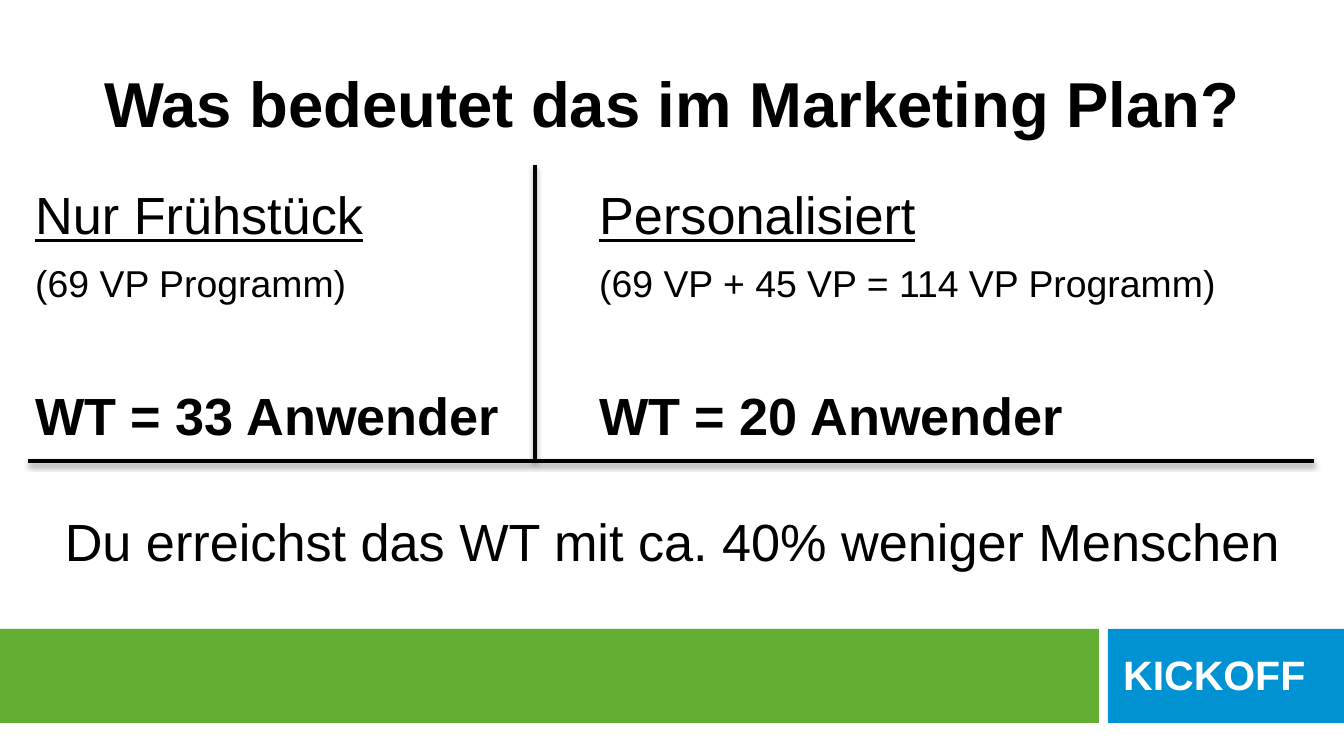
import pptx
import pptx.util
import pptx.dml.color
import pptx.enum.shapes
import pptx.enum.text
import pptx.oxml

SCALE = 914400 / 134.4  # EMU in one px
FONT = "Arial"
BLACK, WHITE, GREEN, BLUE = "000000", "FFFFFF", "63AF34", "0092D2"
LEFT = pptx.enum.text.PP_ALIGN.LEFT
MID = pptx.enum.text.PP_ALIGN.CENTER

SHADOW = (
    '<a:effectLst xmlns:a="http://schemas.openxmlformats.org/drawingml/2006/main">'
    '<a:outerShdw blurRad="39370" dist="20320" dir="5400000" rotWithShape="0">'
    '<a:srgbClr val="000000"><a:alpha val="38000"/></a:srgbClr>'
    '</a:outerShdw></a:effectLst>'
)


def px(*nums):
    return [pptx.util.Emu(round(n * SCALE)) for n in nums]


def color(code):
    return pptx.dml.color.RGBColor.from_string(code)


def bar(slide, x, y, w, h, fill):
    kind = pptx.enum.shapes.MSO_SHAPE.RECTANGLE
    shape = slide.shapes.add_shape(kind, *px(x, y, w, h))
    shape.shadow.inherit = False
    shape.fill.solid()
    shape.fill.fore_color.rgb = color(fill)
    shape.line.fill.background()


def box(slide, x, y, w, h):
    frame = slide.shapes.add_textbox(*px(x, y, w, h)).text_frame
    frame.word_wrap = True
    return frame


def style(para, text, size, bold=False, under=False, ink=BLACK, align=LEFT):
    para.text = text
    para.alignment = align
    font = para.font
    font.name, font.size = FONT, pptx.util.Pt(size)
    font.bold, font.underline = bold, under
    font.color.rgb = color(ink)


def column(slide, x, w, head, note, goal):
    frame = box(slide, x, 176, w, 460)
    style(frame.paragraphs[0], head, 28, under=True)
    for text, size, bold, gap in ((note, 20, False, 8), (goal, 28, True, 42)):
        para = frame.add_paragraph()
        style(para, text, size, bold)
        para.space_before = pptx.util.Pt(gap)


def rule(slide, x1, y1, x2, y2):
    kind = pptx.enum.shapes.MSO_CONNECTOR.STRAIGHT
    line = slide.shapes.add_connector(kind, *px(x1, y1, x2, y2))
    line.line.color.rgb = color(BLACK)
    line.line.width = pptx.util.Pt(2)
    line._element.spPr.append(pptx.oxml.parse_xml(SHADOW))


def main():
    deck = pptx.Presentation()
    deck.slide_width, deck.slide_height = px(1344, 756)
    slide = deck.slides.add_slide(deck.slide_layouts[6])

    # Footer band
    bar(slide, 0, 629, 1099, 94, GREEN)
    bar(slide, 1108, 629, 236, 94, BLUE)
    label = box(slide, 1110, 652, 234, 54).paragraphs[0]
    style(label, "KICKOFF", 22, bold=True, ink=WHITE)
    label.line_spacing = 0.8

    # Title
    title = box(slide, 0, 39, 1344, 126)
    title.vertical_anchor = pptx.enum.text.MSO_ANCHOR.MIDDLE
    style(title.paragraphs[0], "Was bedeutet das im Marketing Plan?", 34,
          bold=True, align=MID)

    # Two plans side by side
    column(slide, 22, 504, "Nur Frühstück", "(69 VP Programm)",
           "WT = 33 Anwender")
    column(slide, 586, 667, "Personalisiert",
           "(69 VP + 45 VP = 114 VP Programm)", "WT = 20 Anwender")

    # Conclusion
    style(box(slide, 0, 503, 1344, 77).paragraphs[0],
          "Du erreichst das WT mit ca. 40% weniger Menschen", 28, align=MID)

    # Dividing lines
    rule(slide, 535, 165, 535, 461)
    rule(slide, 28, 461, 1314, 461)

    deck.save("out.pptx")


if __name__ == "__main__":
    main()
